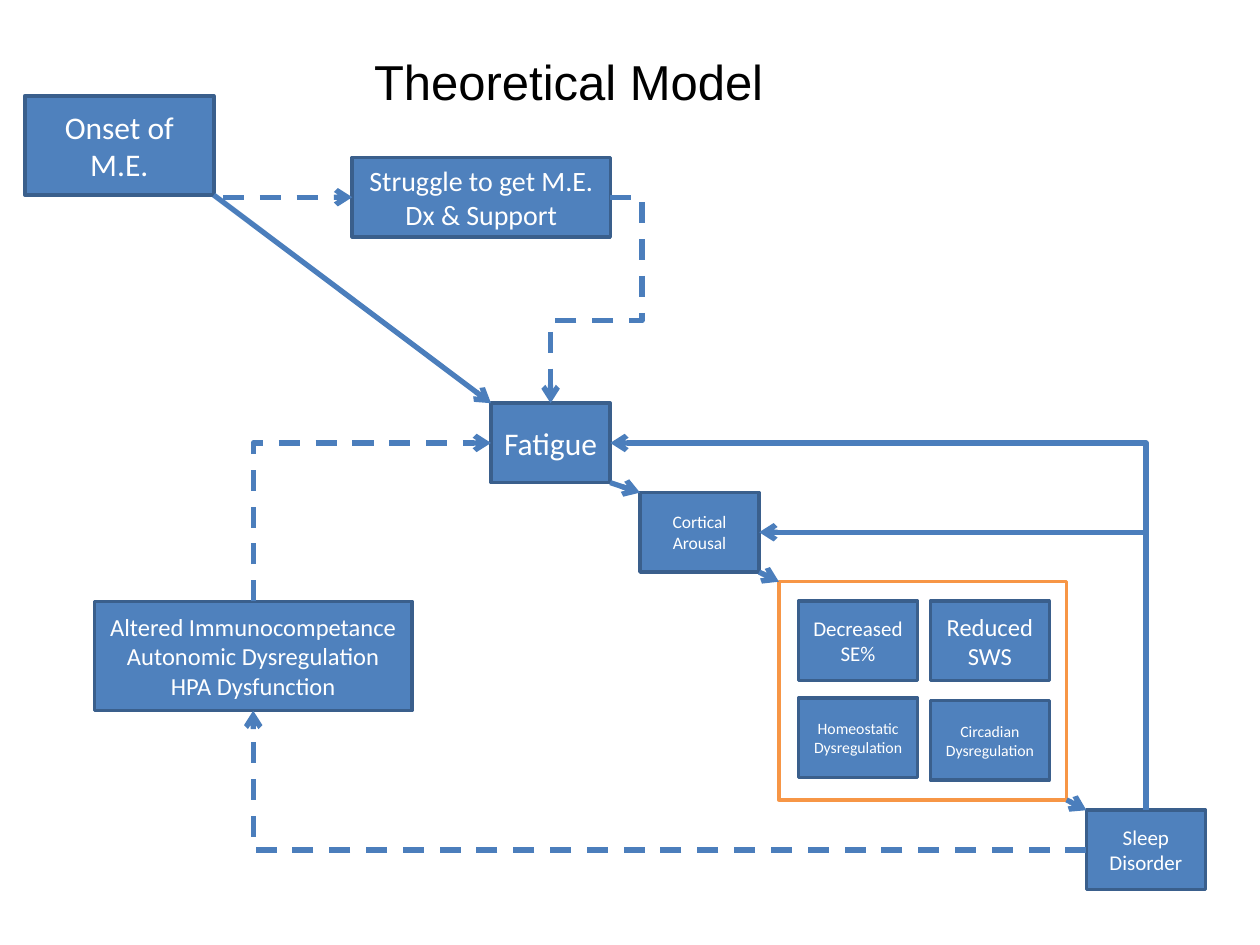
import math

import pptx
import pptx.dml.color
import pptx.enum.dml
import pptx.enum.shapes
import pptx.enum.text
import pptx.oxml.ns
import pptx.oxml.xmlchemy
import pptx.util

Pt = pptx.util.Pt
RGB = pptx.dml.color.RGBColor
Text = pptx.enum.text
Kind = pptx.enum.shapes.MSO_CONNECTOR
qn = pptx.oxml.ns.qn
make = pptx.oxml.xmlchemy.OxmlElement

BLUE = RGB(0x4F, 0x81, 0xBD)
EDGE = RGB(0x3A, 0x5F, 0x8C)
ARROW = RGB(0x4B, 0x7E, 0xBC)
FRAME = RGB(0xF7, 0x96, 0x46)
WHITE = RGB(0xFF, 0xFF, 0xFF)
BLACK = RGB(0, 0, 0)

WIDE, HIGH = 68.1, 45.4


def put(item, vals):
    for name, val in vals.items():
        setattr(item, name, val)


def style(par, align, face, size, color):
    par.alignment = align
    put(par.font, {"name": face, "size": Pt(size)})
    par.font.color.rgb = color


def title(slide, text):
    head = slide.shapes.title
    put(head, {"left": Pt(206.6), "top": Pt(25.9),
               "width": Pt(239), "height": Pt(41.2)})
    frame = head.text_frame
    frame.text = text
    put(frame, {"word_wrap": False,
                "auto_size": Text.MSO_AUTO_SIZE.SHAPE_TO_FIT_TEXT,
                "vertical_anchor": Text.MSO_ANCHOR.TOP})
    style(frame.paragraphs[0], Text.PP_ALIGN.LEFT, "Arial", 28, BLACK)


def panel(slide, left, top, wide, high, edge):
    shape = slide.shapes.add_shape(
        pptx.enum.shapes.MSO_SHAPE.RECTANGLE,
        Pt(left), Pt(top), Pt(wide), Pt(high))
    shape.shadow.inherit = False
    shape.fill.background()
    shape.line.color.rgb = edge
    shape.line.width = Pt(2)
    return shape


def box(slide, text, size, left, top, wide=WIDE, high=HIGH):
    shape = panel(slide, left, top, wide, high, EDGE)
    shape.fill.solid()
    shape.fill.fore_color.rgb = BLUE
    frame = shape.text_frame
    frame.text = text
    put(frame, {"word_wrap": True, "vertical_anchor": Text.MSO_ANCHOR.MIDDLE})
    for par in frame.paragraphs:
        style(par, Text.PP_ALIGN.CENTER, "Calibri", size, WHITE)
    return shape


def spot(shape, across, down):
    return (shape.left.pt + across * shape.width.pt,
            shape.top.pt + down * shape.height.pt)


def link(slide, start, end, dash=False, kind=Kind.STRAIGHT):
    line = slide.shapes.add_connector(kind, *map(Pt, start + end))
    line.line.color.rgb = ARROW
    line.line.width = Pt(3)
    if dash:
        line.line.dash_style = pptx.enum.dml.MSO_LINE.DASH
    props = line._element.spPr
    tail = make("a:tailEnd")
    tail.set("type", "arrow")
    props.find(qn("a:ln")).append(tail)
    props.append(make("a:effectLst"))
    return line


def elbow(slide, start, end, turn, dash=False, bends=()):
    mid = [(a + b) / 2 for a, b in zip(start, end)]
    cos, sin = (round(f(math.radians(turn))) for f in (math.cos, math.sin))

    def unturn(point):
        x, y = point[0] - mid[0], point[1] - mid[1]
        return mid[0] + x * cos + y * sin, mid[1] - x * sin + y * cos

    line = link(slide, unturn(start), unturn(end), dash, Kind.ELBOW)
    props = line._element.spPr
    props.find(qn("a:xfrm")).set("rot", str(turn * 60000))
    geom = props.find(qn("a:prstGeom"))
    geom.set("prst", f"bentConnector{len(bends) + 2}")
    guides = geom.find(qn("a:avLst"))
    for num, bend in enumerate(bends, 1):
        guide = make("a:gd")
        guide.set("name", f"adj{num}")
        guide.set("fmla", f"val {round(bend * 100000)}")
        guides.append(guide)


def main():
    deck = pptx.Presentation()
    put(deck, {"slide_width": Pt(720), "slide_height": Pt(540)})
    slide = deck.slides.add_slide(deck.slide_layouts[5])
    title(slide, "Theoretical Model")

    onset = box(slide, "Onset of M.E.", 18, 14.2, 54.8, 108, 56.7)
    fight = box(slide, "Struggle to get M.E. Dx & Support", 16,
                201.3, 90, 147.5, HIGH)
    tired = box(slide, "Fatigue", 18, 280.6, 230.4)
    brain = box(slide, "Cortical Arousal", 10, 365.7, 281.5)
    sleep = box(slide, "Sleep Disorder", 12, 620.8, 463)
    body = box(slide, "Altered Immunocompetance\nAutonomic Dysregulation\n"
               "HPA Dysfunction", 14, 54, 343.6, 181.4, 62.5)
    group = panel(slide, 445.1, 332.4, 164.4, 124.7, FRAME)
    for text, size, left, top in (
            ("Decreased SE%", 12, 456.3, 343.6),
            ("Reduced SWS", 14, 531.6, 343.6),
            ("Homeostatic Dysregulation", 9, 456.3, 399),
            ("Circadian Dysregulation", 9, 531.6, 400.3)):
        box(slide, text, size, left, top)

    chain = (onset, tired, brain, group, sleep)
    for one, two in zip(chain, chain[1:]):
        link(slide, spot(one, 1, 1), spot(two, 0, 0))
    side = spot(fight, 0, 0.5)
    link(slide, (127.5, side[1]), side, True).end_connect(fight, 1)

    for goal in (tired, brain):
        elbow(slide, spot(sleep, 0.5, 0), spot(goal, 1, 0.5), 270)
    elbow(slide, spot(sleep, 0, 0.5), spot(body, 0.5, 1), 180, True)
    elbow(slide, spot(body, 0.5, 0), spot(tired, 0, 0.5), 90, True)
    elbow(slide, spot(fight, 1, 0.5), spot(tired, 0.5, 0), 0, True,
          (-0.53, 0.6))
    deck.save("out.pptx")


if __name__ == "__main__":
    main()
